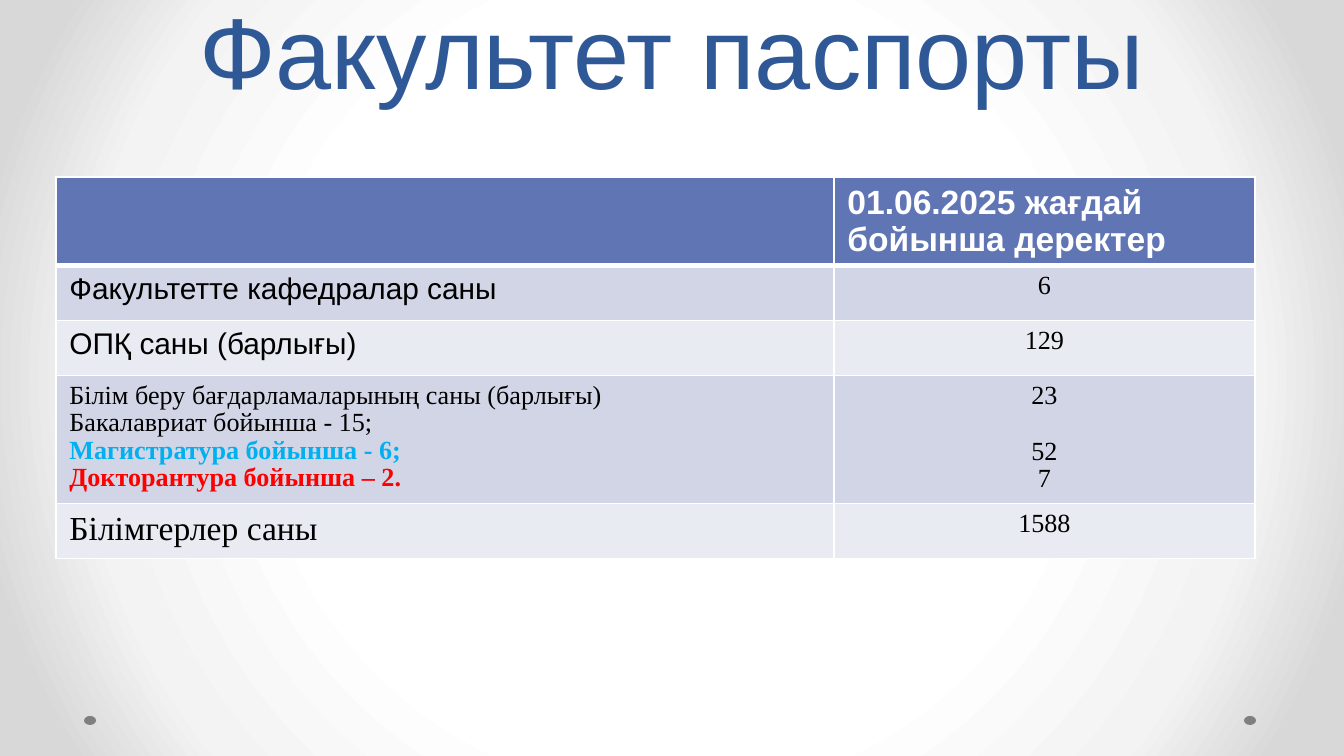
from lxml import etree
from pptx import Presentation, util as u
from pptx.dml.color import RGBColor
from pptx.enum import shapes, text
from pptx.oxml import ns

PX = 914400 / 134.4
COLORS = {
    "title": "2F5897", "header": "6076B4", "band_dark": "D1D5E5",
    "band_light": "E9EBF2", "white": "FFFFFF", "black": "000000",
    "master": "00B0F0", "doctor": "FF0000", "dot": "7F7F7F",
    "haze": "F3F3F3", "edge": "D8D8D8",
}
SANS, SERIF = "Arial", "Times New Roman"
LEFT, CENTER = text.PP_ALIGN.LEFT, text.PP_ALIGN.CENTER


def px(length):
    return u.Emu(round(length * PX))


def rgb(name):
    return RGBColor.from_string(COLORS[name])


def sub(parent, tag, **attributes):
    return etree.SubElement(parent, ns.qn(tag), attributes)


def write(paragraph, words, size=14, font=SERIF, color="black", bold=False,
          align=LEFT, spacing=1.0, before=0):
    paragraph.alignment = align
    paragraph.line_spacing = spacing
    paragraph.space_before = u.Pt(before)
    run = paragraph.add_run()
    run.text = words
    run.font.size, run.font.name, run.font.bold = u.Pt(size), font, bold
    run.font.color.rgb = rgb(color)


def paint_background(slide):
    fill = slide.background.fill
    fill.gradient()
    gradient = slide.background._cSld.find(".//" + ns.qn("a:gradFill"))
    for child in list(gradient):
        gradient.remove(child)
    stops = sub(gradient, "a:gsLst")
    for percent, color in [(0, "white"), (50, "white"), (76, "haze"),
                           (92, "edge"), (100, "edge")]:
        stop = sub(stops, "a:gs", pos=str(percent * 1000))
        sub(stop, "a:srgbClr", val=COLORS[color])
    circle = sub(gradient, "a:path", **{"path": "circle"})
    sub(circle, "a:fillToRect", **dict.fromkeys("ltrb", "50000"))


def add_dots(slide, left, top, width, height):
    dot_width = 12
    for x in (left, left + width - dot_width):
        dot = slide.shapes.add_shape(shapes.MSO_SHAPE.OVAL, px(x), px(top),
                                     px(dot_width), px(height))
        dot.shadow.inherit = False
        dot.fill.solid()
        dot.fill.fore_color.rgb = rgb("dot")
        dot.line.fill.background()


def add_title(slide, left, top, width, height):
    title = slide.shapes.title
    title.left, title.top = px(left), px(top)
    title.width, title.height = px(width), px(height)
    frame = title.text_frame
    frame.auto_size = text.MSO_AUTO_SIZE.NONE
    frame.vertical_anchor = text.MSO_ANCHOR.BOTTOM
    write(frame.paragraphs[0], "Факультет паспорты", size=54, font=SANS,
          color="title", align=CENTER, spacing=1.07)


def style_cell(cell, fill, bottom):
    cell.fill.solid()
    cell.fill.fore_color.rgb = rgb(fill)
    properties = cell._tc.get_or_add_tcPr()
    widths = {"a:lnL": 1, "a:lnR": 1, "a:lnT": 1, "a:lnB": bottom}
    for place, (tag, points) in enumerate(widths.items()):
        border = etree.Element(ns.qn(tag), w=str(u.Pt(points)))
        sub(sub(border, "a:solidFill"), "a:srgbClr", val=COLORS["white"])
        properties.insert(place, border)


def add_passport(slide, left, top, width, height):
    value = dict(align=CENTER, spacing=0.95)
    program = dict(spacing=0.95)
    # Each row: height, label lines, value lines
    rows = [
        (88, [], [("01.06.2025 жағдай бойынша деректер",
                   dict(size=18, font=SANS, color="white", bold=True))]),
        (55, [("Факультетте кафедралар саны", dict(size=16, font=SANS))],
         [("6", value)]),
        (55, [("ОПҚ саны (барлығы)", dict(size=16, font=SANS))],
         [("129", value)]),
        (128, [("Білім беру бағдарламаларының саны (барлығы)", program),
               ("Бакалавриат бойынша - 15;", program),
               ("Магистратура бойынша - 6;",
                dict(program, color="master", bold=True)),
               ("Докторантура бойынша – 2.",
                dict(program, color="doctor", bold=True))],
         [("23", value), ("52", dict(value, before=15.3)), ("7", value)]),
        (55, [("Білімгерлер саны", dict(size=18))], [("1588", value)]),
    ]
    table = slide.shapes.add_table(len(rows), 2, px(left), px(top),
                                   px(width), px(height)).table
    label_width = 778
    table.columns[0].width = px(label_width)
    table.columns[1].width = px(width - label_width)
    for r, (row_height, *contents) in enumerate(rows):
        table.rows[r].height = px(row_height)
        band = "header" if r == 0 else "band_dark" if r % 2 else "band_light"
        for c, lines in enumerate(contents):
            cell = table.cell(r, c)
            style_cell(cell, band, bottom=3 if r == 0 else 1)
            frame = cell.text_frame
            for i, (words, style) in enumerate(lines):
                paragraph = frame.add_paragraph() if i else frame.paragraphs[0]
                write(paragraph, words, **style)


def main():
    deck = Presentation()
    deck.slide_width, deck.slide_height = px(1344), px(756)
    slide = deck.slides.add_slide(deck.slide_layouts[5])
    paint_background(slide)
    add_dots(slide, 84, 716, 1172, 9)
    add_title(slide, 67, 35, 1210, 81)
    add_passport(slide, 56, 177, 1199, 381)
    deck.save("out.pptx")


if __name__ == "__main__":
    main()
